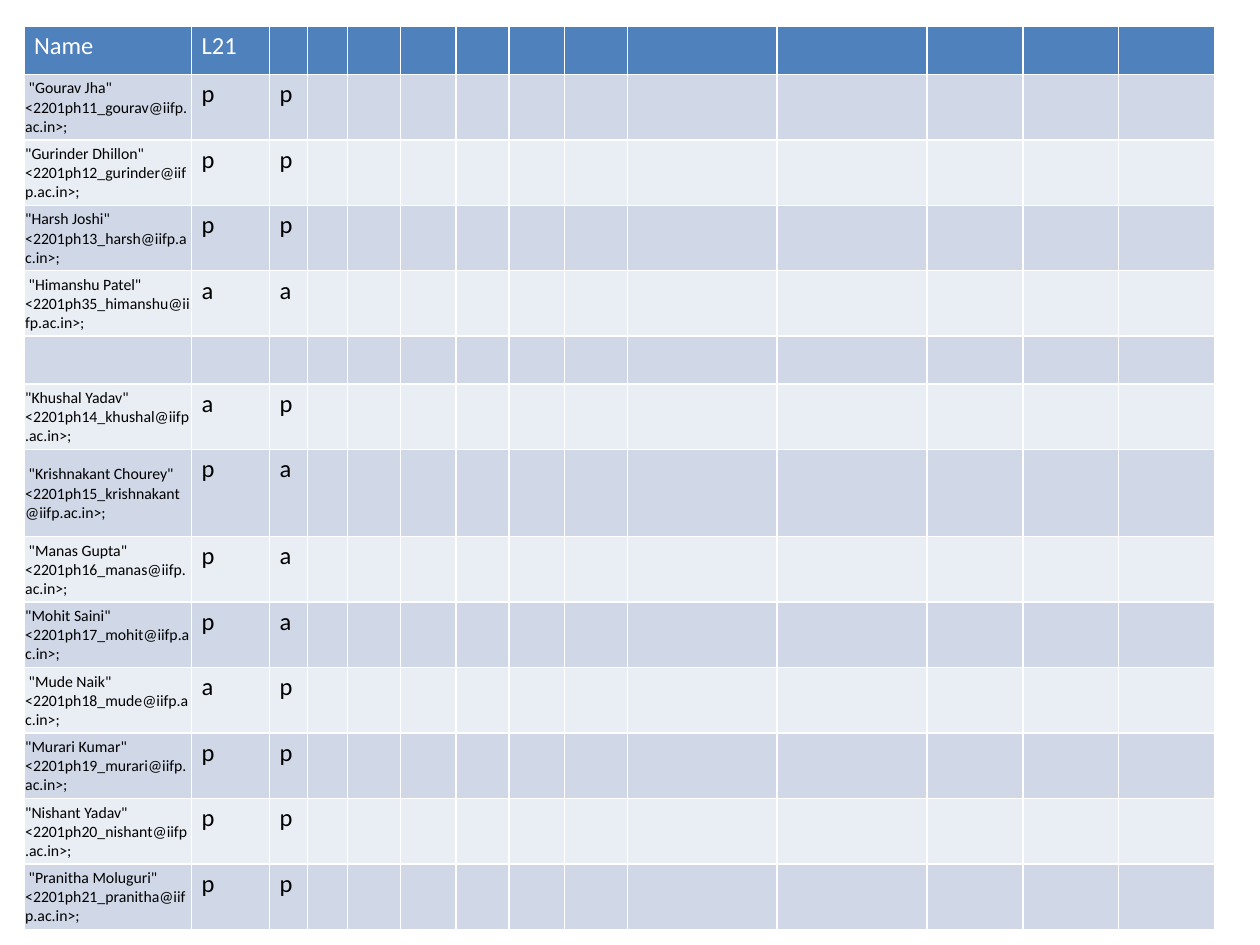
from lxml import etree
from pptx import Presentation, util as u
from pptx.dml.color import RGBColor
from pptx.enum import text
from pptx.oxml import ns

COLORS = {"header": "4F81BD", "odd": "D0D8E8", "even": "E9EDF4",
          "border": "FFFFFF", "title": "FFFFFF", "body": "000000"}
FONT = "Calibri"
DOMAIN = "iifp.ac.in"

COLUMNS = [1.33, 0.62, 0.3, 0.32, 0.42, 0.44, 0.42, 0.44, 0.5] + [1.19] * 2 + [0.76] * 3
PLAIN_ROW, STUDENT_ROW, TALL_ROW = 0.38, 0.52, 0.69

# Lead-in space, name, roll number and attendance marks; None is the empty row
STUDENTS = [
    (" ", "Gourav Jha", 11, "pp"),
    ("", "Gurinder Dhillon", 12, "pp"),
    ("", "Harsh Joshi", 13, "pp"),
    (" ", "Himanshu Patel", 35, "aa"),
    None,
    ("", "Khushal Yadav", 14, "ap"),
    (" ", "Krishnakant Chourey", 15, "pa"),
    (" ", "Manas Gupta", 16, "pa"),
    ("", "Mohit Saini", 17, "pa"),
    (" ", "Mude Naik", 18, "ap"),
    ("", "Murari Kumar", 19, "pp"),
    ("", "Nishant Yadav", 20, "pp"),
    (" ", "Pranitha Moluguri", 21, "pp"),
]

MARK_FORMAT = {"margin_left": u.Inches(0.08), "margin_right": u.Inches(0.08),
               "margin_top": u.Inches(0.04), "margin_bottom": u.Inches(0.04),
               "vertical_anchor": text.MSO_ANCHOR.TOP}
NAME_FORMAT = {"margin_left": u.Inches(0.01), "margin_right": u.Inches(0.01),
               "margin_top": u.Inches(0.01), "margin_bottom": 0,
               "vertical_anchor": text.MSO_ANCHOR.MIDDLE}


def set_format(target, values):
    for name, value in values.items():
        setattr(target, name, value)


def student_row(student):
    if student is None:
        return []
    lead, name, roll, marks = student
    login = name.split()[0].lower()
    return [f'{lead}"{name}" <2201ph{roll}_{login}@{DOMAIN}>;', *marks]


def row_height(student):
    if student is None:
        return PLAIN_ROW
    return TALL_ROW if student[1] == "Krishnakant Chourey" else STUDENT_ROW


def set_borders(cell, width=1):
    """Draw all four edges, with the width in points."""
    props = cell._tc.get_or_add_tcPr()
    for side in "LRTB":
        line = etree.SubElement(props, ns.qn(f"a:ln{side}"), w=str(u.Pt(width)))
        fill = etree.SubElement(line, ns.qn("a:solidFill"))
        etree.SubElement(fill, ns.qn("a:srgbClr"), val=COLORS["border"])


def write_cell(cell, words, size, color):
    para = cell.text_frame.paragraphs[0]
    if not words:
        etree.SubElement(para._p, ns.qn("a:endParaRPr"), sz=str(size * 100))
        return
    span = para.add_run()
    span.text = words
    set_format(span.font, {"name": FONT, "size": u.Pt(size), "bold": False})
    span.font.color.rgb = RGBColor.from_string(color)


def add_attendance(page, left, top):
    rows = [["Name", "L21"]] + [student_row(student) for student in STUDENTS]
    heights = [PLAIN_ROW] + [row_height(student) for student in STUDENTS]
    table = page.shapes.add_table(
        len(rows), len(COLUMNS), left, top,
        u.Inches(sum(COLUMNS)), u.Inches(sum(heights))).table
    set_format(table, {"first_row": False, "horz_banding": False})
    for column, width in zip(table.columns, COLUMNS):
        column.width = u.Inches(width)
    for index, (row, height, words) in enumerate(zip(table.rows, heights, rows)):
        row.height = u.Inches(height)
        band = "header" if index == 0 else "odd" if index % 2 else "even"
        for place, cell in enumerate(row.cells):
            is_name = index > 0 and place == 0 and bool(words)
            set_format(cell, NAME_FORMAT if is_name else MARK_FORMAT)
            set_borders(cell)
            cell.fill.solid()
            cell.fill.fore_color.rgb = RGBColor.from_string(COLORS[band])
            write_cell(cell, words[place] if place < len(words) else "",
                       9 if is_name else 14,
                       COLORS["body" if index else "title"])


def main():
    deck = Presentation()
    set_format(deck, {"slide_width": u.Inches(10), "slide_height": u.Inches(7.5)})
    page = deck.slides.add_slide(deck.slide_layouts[6])
    add_attendance(page, u.Inches(0.19), u.Inches(0.21))
    deck.save("out.pptx")


if __name__ == "__main__":
    main()
